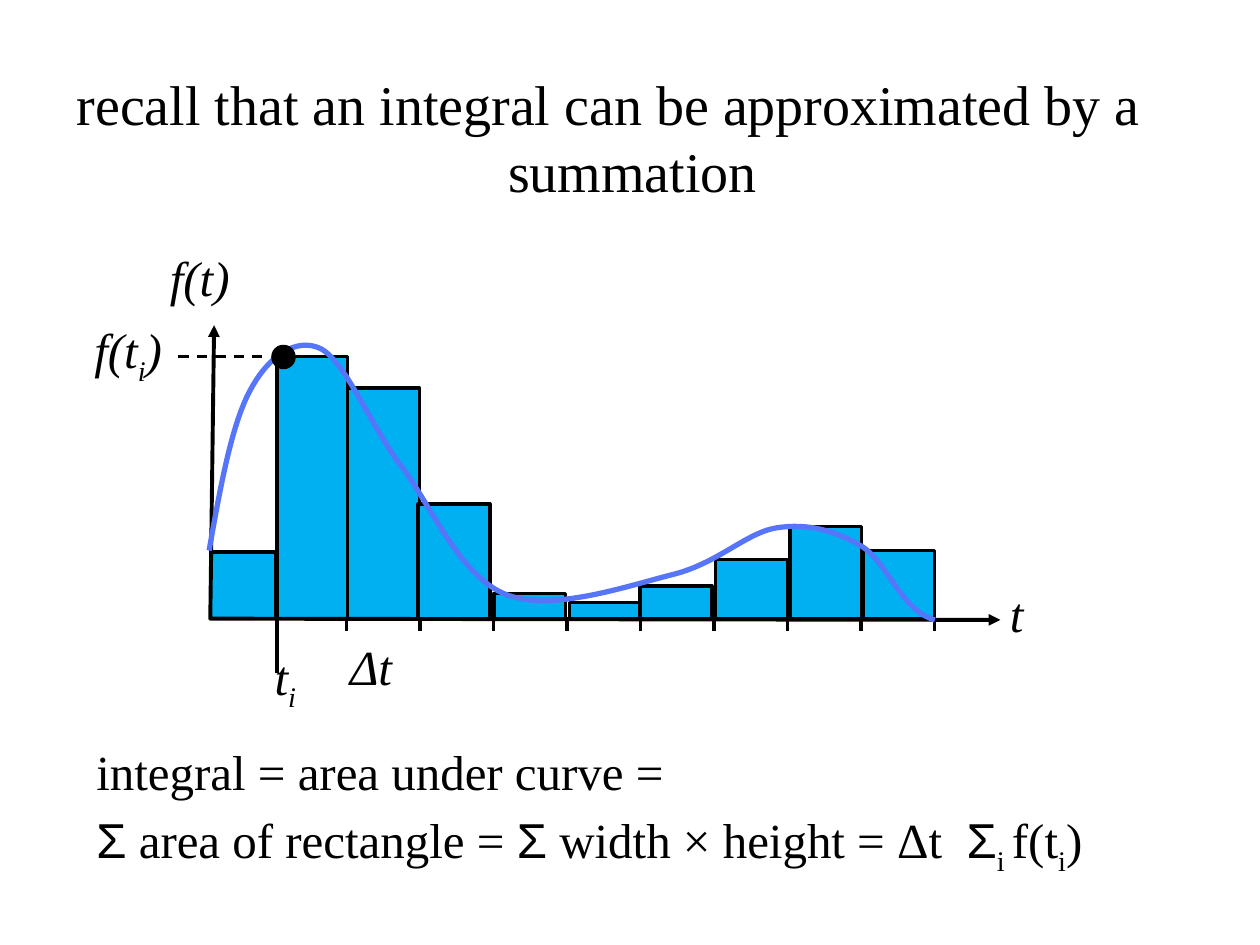
"""Build a slide that shows an integral approximated by a sum of bars."""
import pptx
import pptx.util
import pptx.dml.color
import pptx.enum.dml
import pptx.enum.shapes
import pptx.enum.text
import pptx.oxml
import pptx.oxml.ns
from lxml import etree

Pt = pptx.util.Pt
RGBColor = pptx.dml.color.RGBColor
SHAPE = pptx.enum.shapes.MSO_SHAPE
BLACK = RGBColor(0x00, 0x00, 0x00)
SKY = RGBColor(0x00, 0xB0, 0xF0)
VIOLET = RGBColor(0x56, 0x75, 0xF8)
SERIF = "Times New Roman"
qn = pptx.oxml.ns.qn

deck = pptx.Presentation()
deck.slide_width, deck.slide_height = Pt(720), Pt(540)
slide = deck.slides.add_slide(deck.slide_layouts[6])
shapes = slide.shapes


def write(area, lines, size=28, italic=False, hang=0, align=None):
    frame = shapes.add_textbox(*map(Pt, area)).text_frame
    frame.word_wrap = True
    for index, runs in enumerate(lines):
        para = frame.add_paragraph() if index else frame.paragraphs[0]
        para.alignment = align
        para.font.size = Pt(size)
        para.font.name = SERIF
        para.font.italic = italic
        para.font.color.rgb = BLACK
        if hang:
            para.space_before = Pt(size * 0.2)
            props = para._p.get_or_add_pPr()
            props.set("marL", str(Pt(hang)))
            props.set("indent", str(-Pt(hang)))
        for text, kind in runs:
            run = para.add_run()
            run.text = text
            if kind == "sum":
                run.font.name = "Arial"
            if kind == "sub":
                run._r.get_or_add_rPr().set("baseline", "-25000")


def trace(points, color, width):
    spots = [(Pt(x), Pt(y)) for x, y in points]
    pen = shapes.build_freeform(*spots[0], scale=1.0)
    pen.add_line_segments(spots[1:], close=False)
    shape = pen.convert_to_shape()
    shape.shadow.inherit = False
    shape.fill.background()
    shape.line.color.rgb = color
    shape.line.width = Pt(width)
    return shape


floor = 353.5
bars = [
    (120.2, 315.4, 37.4), (158.4, 203.8, 40.3), (198.7, 221.8, 41),
    (239, 288, 41), (282.2, 339.1, 41), (325.4, 344.2, 41),
    (365.8, 334.8, 41), (409, 319.7, 41), (451.4, 301, 41),
    (493.2, 314.6, 41),
]
blocks = [(SHAPE.RECTANGLE, x, y, w, floor - y, SKY) for x, y, w in bars]
blocks.append((SHAPE.OVAL, 156, 198, 12, 12, BLACK))
lines = [(158.4, floor, 158.4, 384.5, 2.25)]
lines += [(198 + 42 * k, floor, 198 + 42 * k, 360.7, 2.25) for k in range(9)]
lines.append((150, 203.8, 102, 203.8, 1.5))

for kind, x, y, w, h, color in blocks[:-1]:
    bar = shapes.add_shape(kind, Pt(x), Pt(y), Pt(w), Pt(h))
    bar.shadow.inherit = False
    bar.fill.solid()
    bar.fill.fore_color.rgb = color
    bar.line.color.rgb = BLACK
    bar.line.width = Pt(2)

axes = trace([(122.4, 185.8), (120.2, 353.5), (571.7, 354.2)], BLACK, 2.25)
for end in ("headEnd", "tailEnd"):
    etree.SubElement(axes.line._get_or_add_ln(), qn("a:" + end), type="triangle")

for x1, y1, x2, y2, width in lines:
    line = shapes.add_connector(
        pptx.enum.shapes.MSO_CONNECTOR.STRAIGHT, Pt(x1), Pt(y1), Pt(x2), Pt(y2))
    line.line.color.rgb = BLACK
    line.line.width = Pt(width)
    if y1 == y2:
        line.line.dash_style = pptx.enum.dml.MSO_LINE.DASH
    etree.SubElement(line._element.spPr, qn("a:effectLst"))

curve = trace([
    (119.5, 314.6),
    (126, 277.9), (132.5, 241.9), (143.3, 222.5),
    (153.4, 203.8), (169.2, 192.2), (183.6, 199.4),
    (198, 207.4), (212.4, 244.8), (230.4, 267.8),
    (247.7, 291.6), (263.5, 329.8), (289.4, 339.8),
    (315.4, 349.9), (358.6, 334.8), (384.5, 328.3),
    (410.4, 321.8), (426.2, 304.6), (443.5, 301.7),
    (461.5, 298.8), (476.6, 303.1), (491.8, 311.8),
    (506.9, 320.4), (514.8, 349.2), (534.2, 354.2),
], VIOLET, 3)
route = next(curve._element.iter(qn("a:path")))
steps = route.findall(qn("a:lnTo"))
for start in range(0, len(steps), 3):
    bend = etree.SubElement(route, qn("a:cubicBezTo"))
    for step in steps[start:start + 3]:
        bend.append(step[0])
        route.remove(step)

kind, x, y, w, h, color = blocks[-1]
dot = shapes.add_shape(kind, Pt(x), Pt(y), Pt(w), Pt(h))
dot.shadow.inherit = False
dot.fill.solid()
dot.fill.fore_color.rgb = color
dot.line.color.rgb = BLACK
dot.line.width = Pt(2)

write((0, 36, 696, 120),
      [[("recall that an integral can be approximated by a summation", "")]],
      size=32, hang=27, align=pptx.enum.text.PP_ALIGN.CENTER)
write((48, 420, 720, 54), [
    [("integral = area under curve =", "")],
    [("Σ", "sum"), (" area of rectangle = ", ""), ("Σ", "sum"),
     (" width × height = Δt  ", ""), ("Σ", "sum"), ("i ", "sub"),
     ("f(t", ""), ("i", "sub"), (")", "")],
], hang=27)

labels = [
    (570, 330, 36, [("t", "")]),
    (90, 138, 102, [("f(t)", "")]),
    (46.8, 179.3, 102, [("f(t", ""), ("i", "sub"), (")", "")]),
    (192.8, 360, 54, [("Δt", "")]),
    (149.8, 365.8, 54, [("t", ""), ("i", "sub")]),
]
for x, y, w, runs in labels:
    write((x, y, w, 41), [runs], italic=True)

deck.save("out.pptx")
